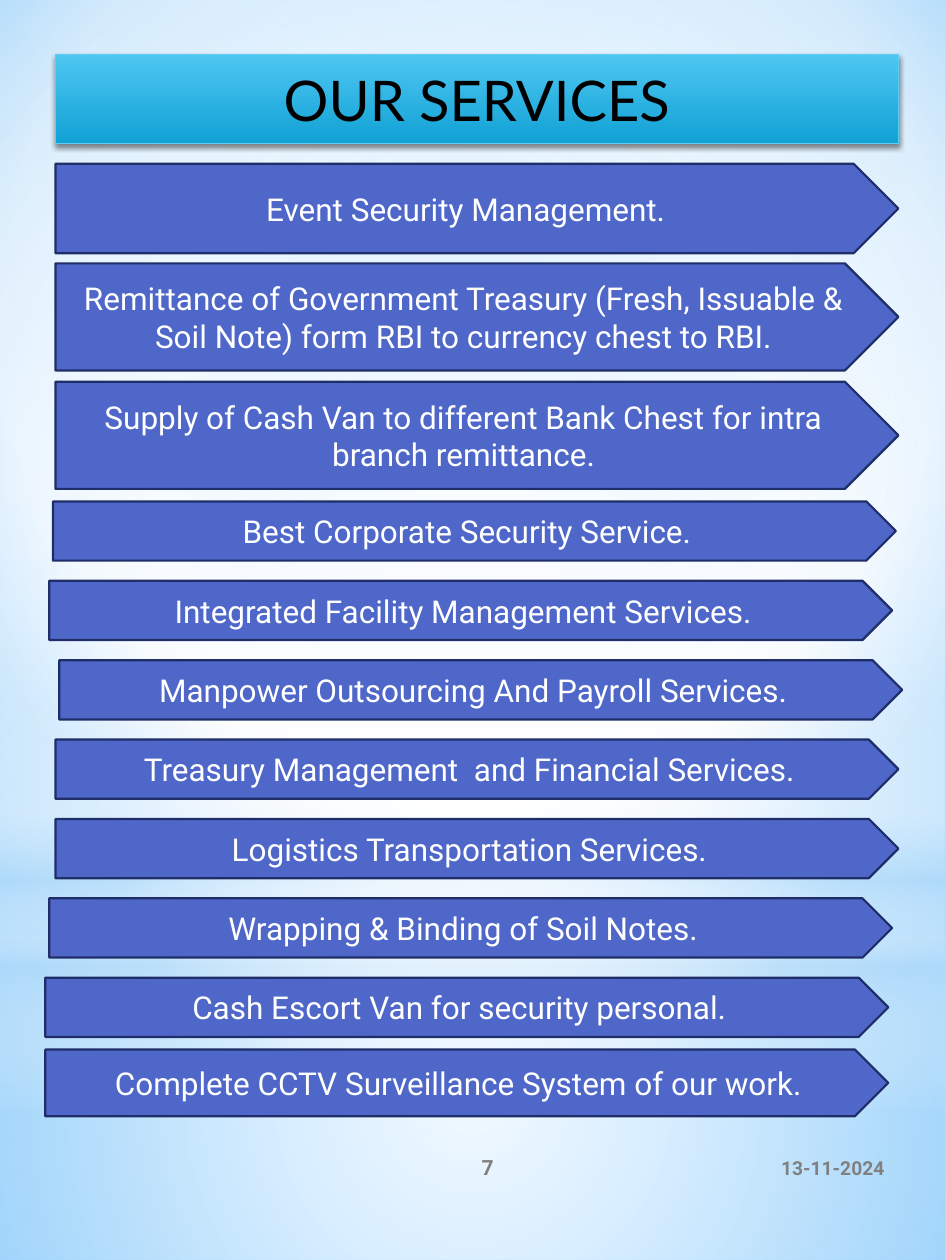
from lxml import etree
from pptx import Presentation
from pptx.dml.color import RGBColor
from pptx.enum.shapes import MSO_SHAPE as SHAPE
from pptx.enum.text import MSO_ANCHOR as ANCHOR, PP_ALIGN as ALIGN
from pptx.oxml import parse_xml
from pptx.oxml.ns import nsdecls, qn
from pptx.util import Inches, Pt

COLS, ROWS = 75, 100  # grid over the page


def rgb(color):
    return RGBColor.from_string(color)


def gradient(stops, angle=None, to=None):
    """Gradient fill; stops are (position, colour[, opacity]) in percent."""
    grad = etree.Element(qn("a:gradFill"), rotWithShape="1")
    gs_lst = etree.SubElement(grad, qn("a:gsLst"))
    for pos, color, *opacity in stops:
        gs = etree.SubElement(gs_lst, qn("a:gs"), pos=str(pos * 1000))
        clr = etree.SubElement(gs, qn("a:srgbClr"), val=color)
        for value in opacity:
            etree.SubElement(clr, qn("a:alpha"), val=str(value * 1000))
    if to:
        circle = etree.SubElement(grad, qn("a:path"), path="circle")
        sides = {side: str(v * 1000) for side, v in zip("ltrb", to)}
        etree.SubElement(circle, qn("a:fillToRect"), **sides)
    else:
        etree.SubElement(grad, qn("a:lin"), ang=str(angle * 60000), scaled="0")
    return grad


class Page:
    heading, body = "Lato", "Roboto"
    bar, edge, white, gray = "4E67C8", "1F2E69", "FFFFFF", "808080"

    def __init__(self, prs):
        self.s = prs.slides.add_slide(prs.slide_layouts[6])
        self.cell_w = prs.slide_width / COLS
        self.cell_h = prs.slide_height / ROWS

    def box(self, col, row, cols, rows):
        return [round(v) for v in (col * self.cell_w, row * self.cell_h,
                                   cols * self.cell_w, rows * self.cell_h)]

    def set_gradient(self, fill, parent, grad):
        fill.solid()
        parent.replace(parent.find(qn("a:solidFill")), grad)

    def background(self, grad):
        fill = self.s.background.fill
        fill.solid()
        self.set_gradient(fill, self.s._element.find(".//" + qn("p:bgPr")), grad)

    def shape(self, kind, at, fill, line=None, width=1):
        sp = self.s.shapes.add_shape(kind, *self.box(*at))
        sp.shadow.inherit = False
        if isinstance(fill, str):
            sp.fill.solid()
            sp.fill.fore_color.rgb = rgb(fill)
        else:
            self.set_gradient(sp.fill, sp._element.spPr, fill)
        if line:
            sp.line.color.rgb = rgb(line)
            sp.line.width = Pt(width)
        else:
            sp.line.fill.background()
        return sp

    def text(self, sp, words, size, color, font=body, align=ALIGN.CENTER, bold=False):
        tf = sp.text_frame
        tf.word_wrap = True
        tf.vertical_anchor = ANCHOR.MIDDLE
        p = tf.paragraphs[0]
        p.alignment = align
        r = p.add_run()
        r.text = words
        r.font.name, r.font.size, r.font.bold = font, Pt(size), bold
        r.font.color.rgb = rgb(color)

    def title(self, at, words):
        fill = gradient([(0, "4EC7F2"), (100, "11A1D4")], angle=90)
        sp = self.shape(SHAPE.FLOWCHART_PROCESS, at, fill, "5ECCF3", 0.75)
        effects = sp._element.spPr.find(qn("a:effectLst"))
        effects.append(parse_xml(
            f'<a:outerShdw {nsdecls("a")} blurRad="{Pt(3.1)}" dist="{Pt(1.8)}" '
            'dir="5400000" rotWithShape="0"><a:srgbClr val="000000">'
            '<a:alpha val="45000"/></a:srgbClr></a:outerShdw>'))
        self.text(sp, words, 32, "000000", self.heading)

    def service(self, at, words):
        sp = self.shape(SHAPE.PENTAGON, at, self.bar, self.edge, 1.25)
        self.text(sp, words, 18, self.white)

    def footer(self, at, words, size, align):
        sp = self.s.shapes.add_textbox(*self.box(*at))
        self.text(sp, words, size, self.gray, align=align, bold=True)


def main():
    prs = Presentation()
    prs.slide_width, prs.slide_height = Inches(7.5), Inches(10)
    page = Page(prs)

    # Backdrop: soft sky with a horizon band and a central glow
    sky, white, center = "B4DCFA", "FFFFFF", (50, 50, 50, 50)
    page.background(gradient([(0, "9ED5FF"), (60, white), (100, "5BB9FF")],
                             to=(20, 10, 20, 60)))
    page.shape(SHAPE.RECTANGLE, (0, 74.4, COLS, 25.6), gradient(
        [(0, white, 91), (37, white, 76), (100, sky, 79)], to=center))
    page.shape(SHAPE.RECTANGLE, (0, 0, COLS, 74.4), gradient(
        [(0, white, 89), (48, white, 62), (100, sky, 79)], to=center))
    page.shape(SHAPE.RECTANGLE, (0, 54.9, COLS, 33.3), gradient(
        [(0, white, 0), (29, white, 30), (45, sky, 40), (55, white, 26),
         (65, sky, 60), (100, white, 0)], angle=90))
    page.shape(SHAPE.OVAL, (0, 23.3, COLS, 74.4), gradient(
        [(0, white, 100), (56, white, 0)], to=center))

    # Title and the tall services below it
    left, wide = 4.4, 66.9
    page.title((left, 4.3, wide, 7.1), "OUR SERVICES")
    for row, rows, words in [
        (13, 7.1, "Event Security Management."),
        (20.9, 8.5, "Remittance of Government Treasury (Fresh, Issuable & "
                    "Soil Note) form RBI to currency chest to RBI."),
        (30.3, 8.5, "Supply of Cash Van to different Bank Chest for intra "
                    "branch remittance."),
    ]:
        page.service((left, row, wide, rows), words)

    # Evenly spaced one-line services
    for i, (col, words) in enumerate([
        (4.2, "Best Corporate Security Service."),
        (3.9, "Integrated Facility Management Services."),
        (4.7, "Manpower Outsourcing And Payroll Services."),
        (left, "Treasury Management  and Financial Services."),
        (left, "Logistics Transportation Services."),
        (3.9, "Wrapping & Binding of Soil Notes."),
        (3.6, "Cash Escort Van for security personal."),
    ]):
        page.service((col, 39.8 + 6.3 * i, wide, 4.7), words)
    page.service((3.6, 83.3, wide, 5.3),
                 "Complete CCTV Surveillance System of our work.")

    # Footer
    page.footer((31.2, 90, 15, 5.3), "7", 12, ALIGN.CENTER)
    page.footer((50.6, 90, 20.6, 5.3), "13-11-2024", 11, ALIGN.RIGHT)

    prs.save("out.pptx")


if __name__ == "__main__":
    main()
